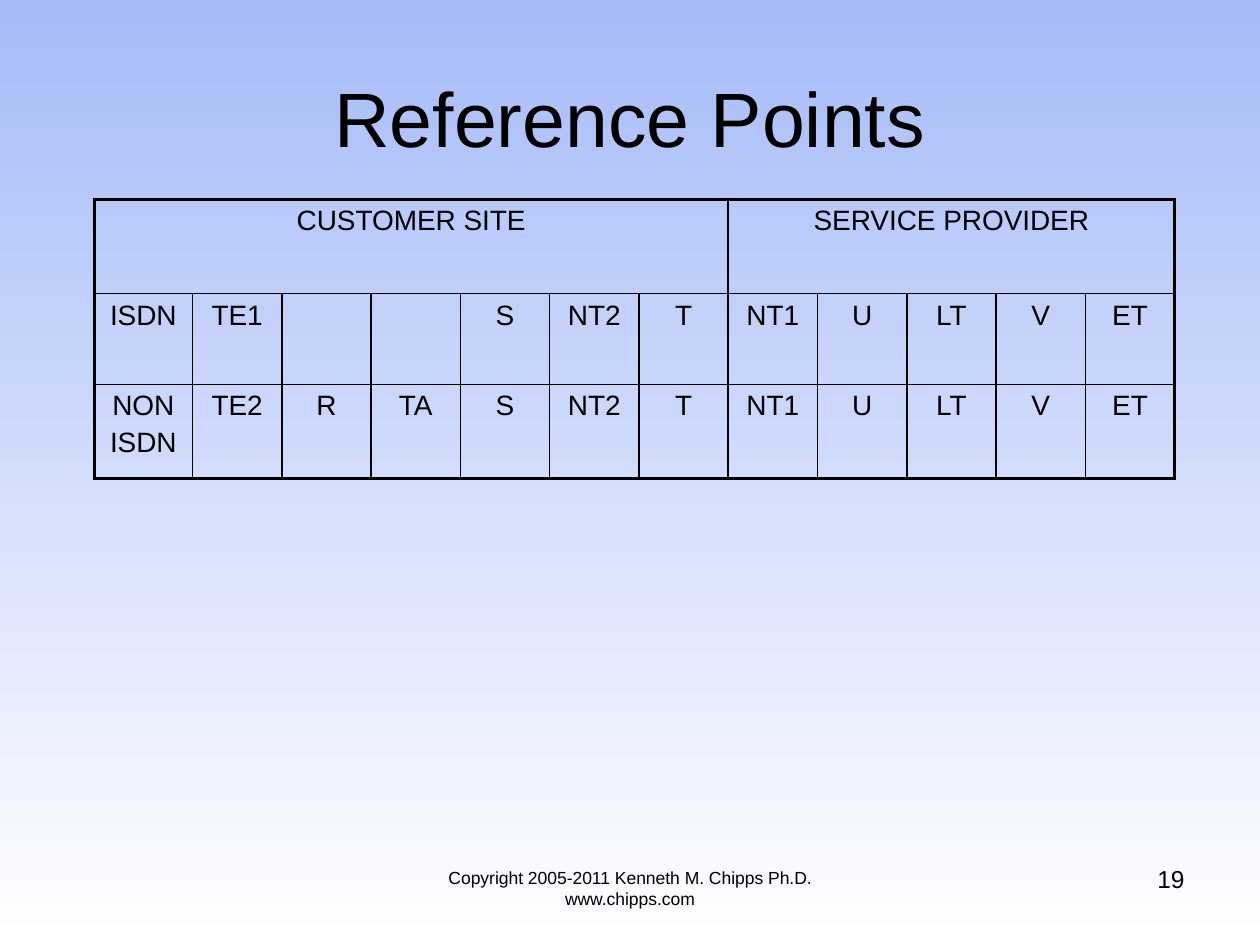
from lxml import etree
from pptx import Presentation
from pptx.dml.color import RGBColor
from pptx.enum.text import MSO_ANCHOR, PP_ALIGN
from pptx.oxml.ns import qn
from pptx.util import Cm, Pt

CENTER, RIGHT = PP_ALIGN.CENTER, PP_ALIGN.RIGHT
FONT, BLACK = "Arial", "000000"
SKY, WHITE = "A6BBF8", "FFFFFF"
THIN, THICK = 1, 2.25

TITLE = "Reference Points"
FOOTER = "Copyright 2005-2011 Kenneth M. Chipps Ph.D. www.chipps.com"
PAGE = "19"
SITES = [("CUSTOMER SITE", 7), ("SERVICE PROVIDER", 5)]
PROVIDER = ["NT1", "U", "LT", "V", "ET"]
POINTS = [
    ["ISDN", "TE1", "", "", "S", "NT2", "T"] + PROVIDER,
    ["NON\nISDN", "TE2", "R", "TA", "S", "NT2", "T"] + PROVIDER,
]
ROW_HEIGHTS = [1.9, 1.83, 1.9]
FIRST_WIDTH, POINT_WIDTH = 1.98, 1.8


def rgb(value):
    return RGBColor.from_string(value)


def write(tf, text, size, align):
    tf.text = text
    for i, p in enumerate(tf.paragraphs):
        p.alignment = align
        if i:
            p.space_before = Pt(size * 0.2)
        for r in p.runs:
            r.font.name, r.font.size = FONT, Pt(size)
            r.font.color.rgb = rgb(BLACK)


def add_text(slide, box, text, size, align):
    tf = slide.shapes.add_textbox(*map(Cm, box)).text_frame
    tf.word_wrap = True
    write(tf, text, size, align)


def set_borders(cell, widths):
    """Draw the left, right, top and bottom lines, with widths in points."""
    tcPr = cell._tc.get_or_add_tcPr()
    for side, width in zip("LRTB", widths):
        ln = etree.SubElement(tcPr, qn(f"a:ln{side}"), w=str(Pt(width)))
        fill = etree.SubElement(ln, qn("a:solidFill"))
        etree.SubElement(fill, qn("a:srgbClr"), val=BLACK)


def add_points_table(slide):
    n_rows, n_cols = len(ROW_HEIGHTS), len(POINTS[0])
    widths = [FIRST_WIDTH] + [POINT_WIDTH] * (n_cols - 1)
    frame = slide.shapes.add_table(n_rows, n_cols, Cm(1.9), Cm(4.02),
                                   Cm(sum(widths)), Cm(sum(ROW_HEIGHTS)))
    table = frame.table
    table.first_row = table.horz_banding = False
    for column, width in zip(table.columns, widths):
        column.width = Cm(width)
    for row, height in zip(table.rows, ROW_HEIGHTS):
        row.height = Cm(height)

    start = 0
    for name, span in SITES:
        cell = table.cell(0, start)
        cell.merge(table.cell(0, start + span - 1))
        write(cell.text_frame, name, 16, CENTER)
        start += span
    for r, labels in enumerate(POINTS, 1):
        for c, label in enumerate(labels):
            write(table.cell(r, c).text_frame, label, 16, CENTER)

    for r in range(n_rows):
        for c in range(n_cols):
            cell = table.cell(r, c)
            end = c + (cell.span_width if cell.is_merge_origin else 1)
            outer = (c == 0, end == n_cols, r == 0, r == n_rows - 1)
            set_borders(cell, [THICK if edge else THIN for edge in outer])
            cell.fill.background()


def main():
    prs = Presentation()
    prs.slide_width, prs.slide_height = Cm(25.4), Cm(19.05)
    slide = prs.slides.add_slide(prs.slide_layouts[5])

    fill = slide.background.fill
    fill.gradient()
    fill.gradient_angle = 270
    for stop, color in zip(fill.gradient_stops, (SKY, WHITE)):
        stop.color.rgb = rgb(color)

    title = slide.shapes.title
    title.left, title.top, title.width, title.height = map(
        Cm, (1.27, 0.76, 22.86, 3.18))
    title.text_frame.vertical_anchor = MSO_ANCHOR.MIDDLE
    write(title.text_frame, TITLE, 44, CENTER)

    add_points_table(slide)
    add_text(slide, (7.62, 17.35, 10.16, 1.32), FOOTER, 10, CENTER)
    add_text(slide, (18.2, 17.3, 5.93, 1.32), PAGE, 14, RIGHT)
    prs.save("out.pptx")


if __name__ == "__main__":
    main()
